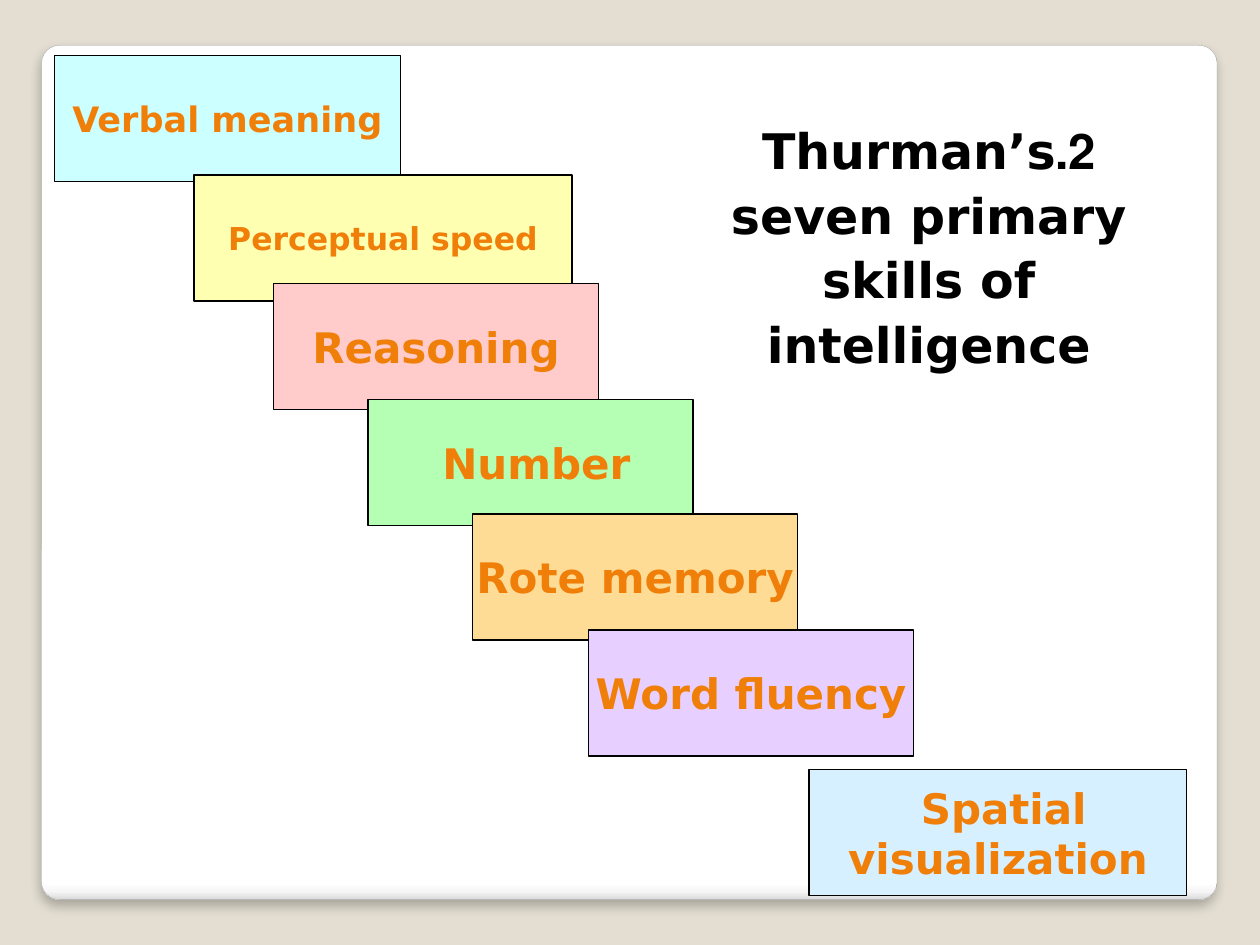
from typing import NamedTuple

from lxml import etree
from pptx import Presentation
from pptx import util as u
from pptx.dml.color import RGBColor
from pptx.enum import shapes, text
from pptx.oxml import parse_xml

FONT = "DejaVu Sans"
NS = 'xmlns:a="http://schemas.openxmlformats.org/drawingml/2006/main"'
PANEL_STOPS = [(0, "FFFFFF"), (98, "FFFFFF"), (99, "F7F7F7"), (100, "DADADA")]


class Skill(NamedTuple):
    lines: tuple[str, ...]
    left: float
    top: float
    width: float
    fill: str
    size: int = 24


SKILLS = [
    Skill(("Verbal meaning",), 0.43, 0.44, 2.75, "CCFFFF", 20),
    Skill(("Perceptual speed",), 1.54, 1.39, 3, "FFFFB1", 18),
    Skill(("Reasoning",), 2.17, 2.25, 2.58, "FFCBCB"),
    Skill(("Number ",), 2.92, 3.17, 2.58, "B5FFB5"),
    Skill(("Rote memory",), 3.75, 4.08, 2.58, "FFDC95"),
    Skill(("Word fluency",), 4.67, 5, 2.58, "E7CFFF"),
    Skill(("Spatial ", "visualization"), 6.42, 6.11, 3, "D7F0FF"),
]


def paint(color_format, value: str) -> None:
    color_format.rgb = RGBColor.from_string(value)


def fill_solid(fill, value: str) -> None:
    fill.solid()
    paint(fill.fore_color, value)


def write_line(paragraph, words: str, size: int, color: str) -> None:
    """Add one centred, bold, right-to-left line."""
    paragraph.alignment = text.PP_ALIGN.CENTER
    paragraph._p.get_or_add_pPr().set("rtl", "1")
    run = paragraph.add_run()
    run.text = words
    run.font.name, run.font.size, run.font.bold = FONT, u.Pt(size), True
    paint(run.font.color, color)


def draw_panel(slide) -> None:
    """Draw the rounded white sheet behind everything else."""
    panel = slide.shapes.add_shape(
        shapes.MSO_SHAPE.ROUNDED_RECTANGLE,
        u.Inches(0.33), u.Inches(0.36), u.Inches(9.33), u.Inches(6.78))
    panel.adjustments[0] = 0.021
    paint(panel.line.color, "A4A4A4")
    panel.line.width = u.Pt(0.16)

    # Gradient with four stops, and a soft shadow below
    panel.fill.gradient()
    panel.fill.gradient_angle = 270
    stops = panel._element.spPr.find(".//{*}gsLst")
    for stop in list(stops):
        stops.remove(stop)
    for position, color in PANEL_STOPS:
        stops.append(parse_xml(
            f'<a:gs {NS} pos="{position * 1000}"><a:srgbClr val="{color}"/></a:gs>'))
    panel._element.spPr.append(etree.fromstring(
        f'<a:effectLst {NS}><a:outerShdw blurRad="{u.Pt(6)}" dist="{u.Pt(4)}" '
        'dir="5400000" algn="t" rotWithShape="0"><a:srgbClr val="000000">'
        '<a:alpha val="25000"/></a:srgbClr></a:outerShdw></a:effectLst>'))
    slide.shapes._spTree.insert(2, panel._element)


def draw_skill(slide, skill: Skill) -> None:
    box = slide.shapes.add_shape(
        shapes.MSO_SHAPE.RECTANGLE, u.Inches(skill.left), u.Inches(skill.top),
        u.Inches(skill.width), u.Inches(1))
    box.shadow.inherit = False
    fill_solid(box.fill, skill.fill)
    paint(box.line.color, "000000")
    box.line.width = u.Pt(0.75)
    frame = box.text_frame
    frame.word_wrap = False
    frame.vertical_anchor = text.MSO_ANCHOR.MIDDLE
    for index, words in enumerate(skill.lines):
        paragraph = frame.add_paragraph() if index else frame.paragraphs[0]
        write_line(paragraph, words, skill.size, "F07F09")


def write_title(slide) -> None:
    title = slide.shapes.title
    title.left, title.top = u.Inches(5.58), u.Inches(0.86)
    title.width, title.height = u.Inches(3.58), u.Inches(2.13)
    fill_solid(title.fill, "FFFFFF")
    frame = title.text_frame
    frame.word_wrap = True
    frame.auto_size = text.MSO_AUTO_SIZE.SHAPE_TO_FIT_TEXT
    frame.vertical_anchor = text.MSO_ANCHOR.TOP
    heading = frame.paragraphs[0]
    heading.line_spacing = 1.1
    write_line(heading, "2.Thurman’s seven primary skills of intelligence", 28, "000000")


def main() -> None:
    deck = Presentation()
    deck.slide_width, deck.slide_height = u.Inches(10), u.Inches(7.5)
    slide = deck.slides.add_slide(deck.slide_layouts[5])
    fill_solid(slide.background.fill, "E3DED1")

    draw_panel(slide)
    write_title(slide)
    # Staircase of skills
    for skill in SKILLS:
        draw_skill(slide, skill)

    deck.save("out.pptx")


if __name__ == "__main__":
    main()
